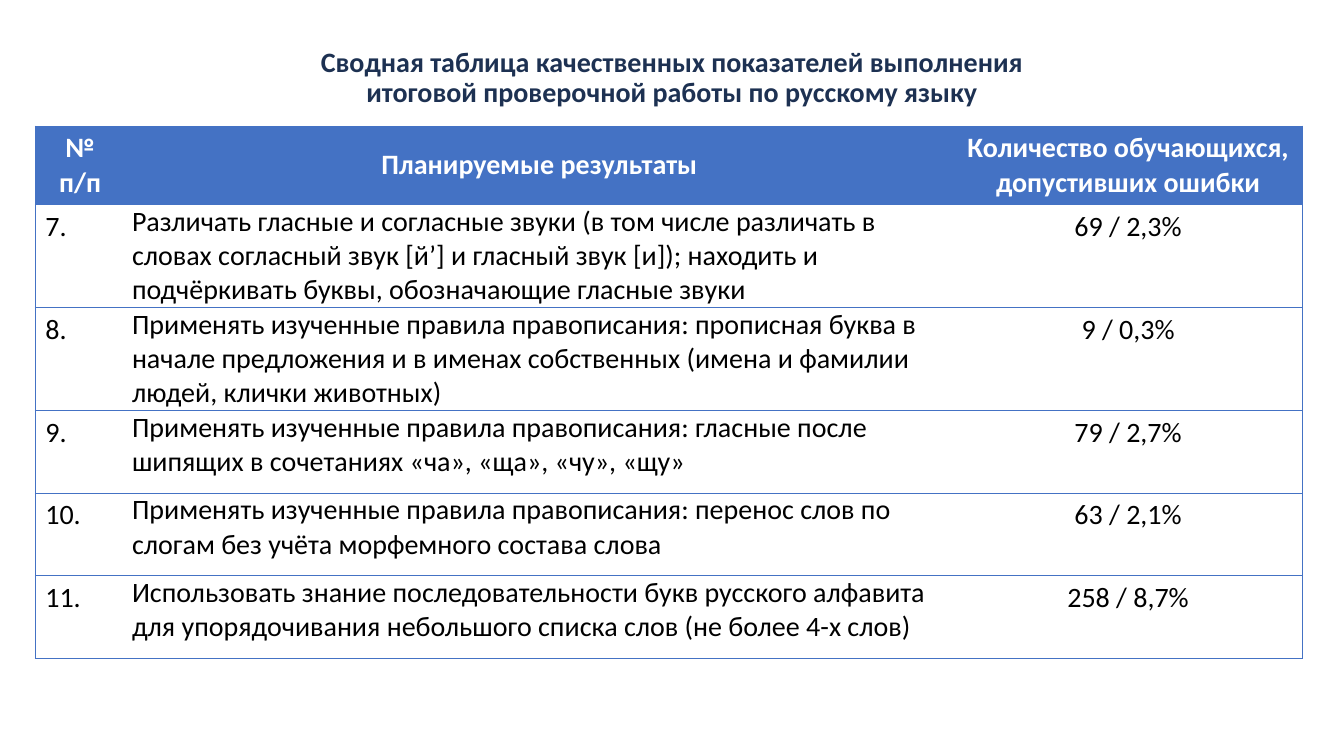
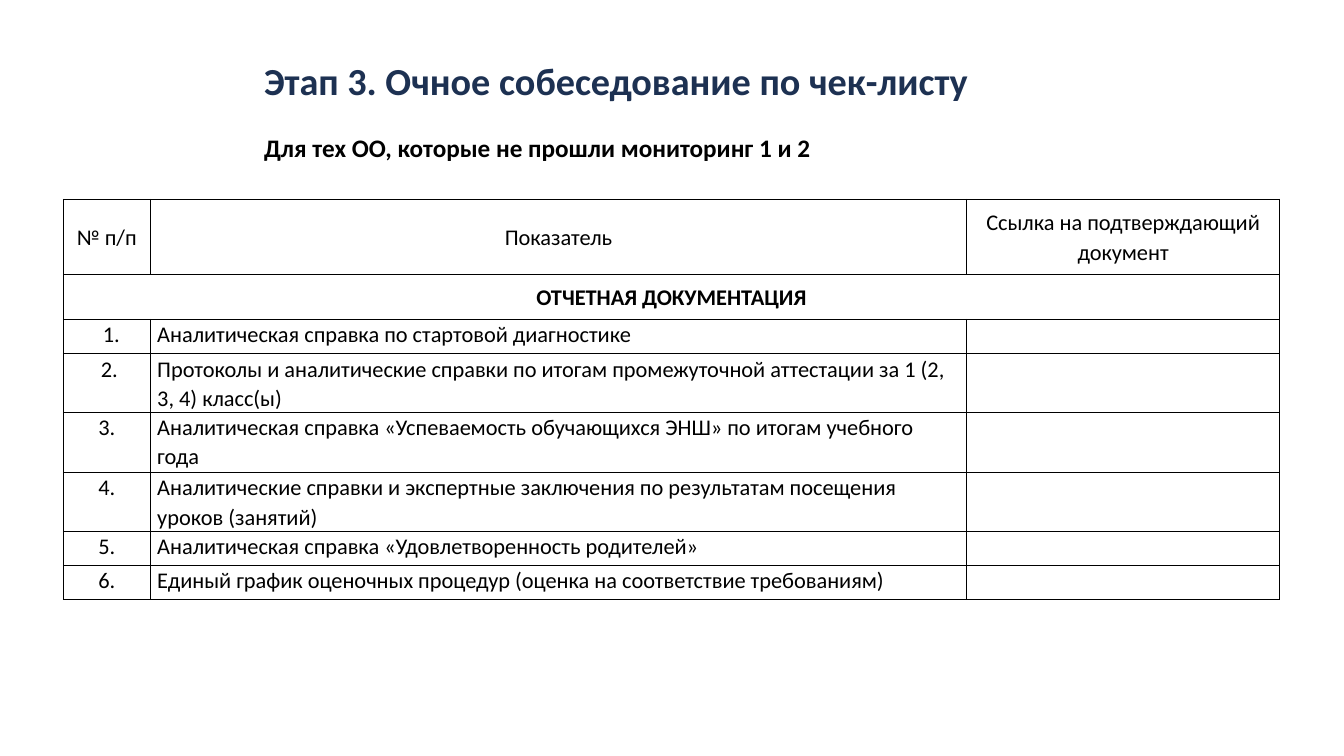
from dataclasses import dataclass

from lxml.etree import SubElement
from pptx import Presentation
from pptx.dml.color import RGBColor
from pptx.enum.text import MSO_ANCHOR, MSO_AUTO_SIZE, PP_ALIGN
from pptx.oxml.ns import qn
from pptx.util import Emu, Pt

PX = 9144  # 100 px to the inch
LEFT, CENTER = PP_ALIGN.LEFT, PP_ALIGN.CENTER
TOP, MIDDLE = MSO_ANCHOR.TOP, MSO_ANCHOR.MIDDLE


@dataclass(frozen=True)
class Theme:
    font: str = "Calibri"
    title: str = "1D3152"
    accent: str = "4472C4"
    text: str = "000000"
    light: str = "FFFFFF"
    title_size: float = 27.3
    table_title_size: float = 20
    results_size: float = 20
    subtitle_size: float = 18
    checklist_size: float = 16


THEME = Theme()

RESULTS = [
    ("7.", "Различать гласные и согласные звуки (в том числе различать в словах "
           "согласный звук [й’] и гласный звук [и]); находить и подчёркивать "
           "буквы, обозначающие гласные звуки", "69 / 2,3%"),
    ("8.", "Применять изученные правила правописания: прописная буква в начале "
           "предложения и в именах собственных (имена и фамилии людей, клички "
           "животных)", "9 / 0,3%"),
    ("9.", "Применять изученные правила правописания: гласные после шипящих в "
           "сочетаниях «ча», «ща», «чу», «щу»", "79 / 2,7%"),
    ("10.", "Применять изученные правила правописания: перенос слов по слогам "
            "без учёта морфемного состава слова", "63 / 2,1%"),
    ("11.", "Использовать знание последовательности букв русского алфавита для "
            "упорядочивания небольшого списка слов (не более 4-х слов)", "258 / 8,7%"),
]

REPORTS = [
    "Аналитическая справка по стартовой диагностике",
    "Протоколы и аналитические справки по итогам промежуточной аттестации "
    "за 1 (2, 3, 4) класс(ы)",
    "Аналитическая справка «Успеваемость обучающихся ЭНШ» по итогам учебного года",
    "Аналитические справки и экспертные заключения по результатам посещения "
    "уроков (занятий)",
    "Аналитическая справка «Удовлетворенность родителей»",
    "Единый график оценочных процедур (оценка на соответствие требованиям)",
]
NUMBER_INDENTS = {1: 9, 2: 5}


def box(*lengths):
    return [Emu(n * PX) for n in lengths]


def add_run(p, text, size, color, bold=False):
    r = p.add_run()
    r.text = text
    r.font.name = THEME.font
    r.font.size = Pt(size)
    r.font.bold = bold
    r.font.color.rgb = RGBColor.from_string(color)


def add_titled_slide(prs, lines, place, size, align):
    s = prs.slides.add_slide(prs.slide_layouts[5])
    title = s.shapes.title
    title.left, title.top, title.width, title.height = box(*place)
    tf = title.text_frame
    tf.auto_size = MSO_AUTO_SIZE.NONE
    tf.vertical_anchor = MIDDLE
    p = tf.paragraphs[0]
    p.alignment = align
    p.line_spacing = 0.9
    for i, line in enumerate(lines):
        if i:
            p.add_line_break()
        add_run(p, line, size, THEME.title, True)
    return s


def add_subtitle(s, text, place):
    tf = s.shapes.add_textbox(*box(*place)).text_frame
    tf.word_wrap = False
    tf.auto_size = MSO_AUTO_SIZE.SHAPE_TO_FIT_TEXT
    add_run(tf.paragraphs[0], text, THEME.subtitle_size, THEME.text, True)


def add_table(s, left, top, cols, rows):
    """Add a table without banding, with the given column widths and row heights."""
    place = box(left, top, sum(cols), sum(rows))
    table = s.shapes.add_table(len(rows), len(cols), *place).table
    table.first_row = table.horz_banding = False
    for column, width in zip(table.columns, cols):
        column.width = Emu(width * PX)
    for row, height in zip(table.rows, rows):
        row.height = Emu(height * PX)
    return table


def set_borders(cell, color, width, sides):
    """Draw the sides named (L, R, T, B) and hide the others."""
    tc_pr = cell._tc.get_or_add_tcPr()
    for i, side in enumerate("LRTB"):
        ln = tc_pr.makeelement(qn(f"a:ln{side}"), {"w": str(Pt(width))})
        if side in sides:
            fill = SubElement(ln, qn("a:solidFill"))
            SubElement(fill, qn("a:srgbClr")).set("val", color)
        else:
            SubElement(ln, qn("a:noFill"))
        tc_pr.insert(i, ln)


def style_cell(cell, anchor=TOP, fill=None, tight=False):
    """Set anchor, fill and, for a tight cell, narrow insets."""
    cell.vertical_anchor = anchor
    if tight:
        cell.margin_left = cell.margin_right = Emu(7 * PX)
        cell.margin_top = cell.margin_bottom = 0
    if fill:
        cell.fill.solid()
        cell.fill.fore_color.rgb = RGBColor.from_string(fill)
    else:
        cell.fill.background()


def write_cell(cell, text, size, color, align, bold=False, spacing=None, indent=0):
    p = cell.text_frame.paragraphs[0]
    p.alignment = align
    if spacing:
        p.line_spacing = spacing
    if indent:
        p._p.get_or_add_pPr().set("marL", str(indent * PX))
    add_run(p, text, size, color, bold)


def build_results(prs):
    s = add_titled_slide(
        prs, ["Сводная таблица качественных показателей выполнения",
              "итоговой проверочной работы по русскому языку"],
        (77, 27, 1179, 101), THEME.table_title_size, CENTER)
    heads = ("№ п/п", "Планируемые результаты",
             "Количество обучающихся, допустивших ошибки")
    table = add_table(s, 35, 125, (89, 822, 346), (78, 102, 102, 82, 82, 82))
    sides = ("LTB", "TB", "RTB")
    aligns = (LEFT, LEFT, CENTER)
    for i, row in enumerate([heads, *RESULTS]):
        head = i == 0
        for j, text in enumerate(row):
            cell = table.cell(i, j)
            style_cell(cell, MIDDLE if head else TOP,
                       THEME.accent if head else None, not head and j == 1)
            set_borders(cell, THEME.accent, 0.5, sides[j])
            write_cell(cell, text, THEME.results_size,
                       THEME.light if head else THEME.text,
                       CENTER if head else aligns[j], head)


def build_checklist(prs):
    s = add_titled_slide(prs, ["Этап 3. Очное собеседование по чек-листу"],
                         (252, 49, 902, 66), THEME.title_size, LEFT)
    add_subtitle(s, "Для тех ОО, которые не прошли мониторинг 1 и 2",
                 (252, 126, 569, 40))
    heads = ("№ п/п", "Показатель", "Ссылка на подтверждающий документ")
    section = ("ОТЧЕТНАЯ ДОКУМЕНТАЦИЯ", "", "")
    reports = [(f"{n}.", text, "") for n, text in enumerate(REPORTS, 1)]
    table = add_table(s, 63, 198, (86, 810, 310), (74, 45, 34, 58, 60, 58, 34, 34))
    table.cell(1, 0).merge(table.cell(1, 2))
    for i, row in enumerate([heads, section, *reports]):
        for j, text in enumerate(row):
            cell = table.cell(i, j)
            style_cell(cell, MIDDLE if i < 2 else TOP, tight=True)
            set_borders(cell, THEME.text, 1, "LRTB")
            if text:
                write_cell(cell, text, THEME.checklist_size, THEME.text,
                           CENTER if i < 2 or j == 0 else LEFT, i == 1, 1.07,
                           NUMBER_INDENTS.get(i - 1, 0) if j == 0 else 0)


def main():
    prs = Presentation()
    prs.slide_width, prs.slide_height = box(1333, 750)
    build_results(prs)
    build_checklist(prs)
    prs.save("out.pptx")


if __name__ == "__main__":
    main()
